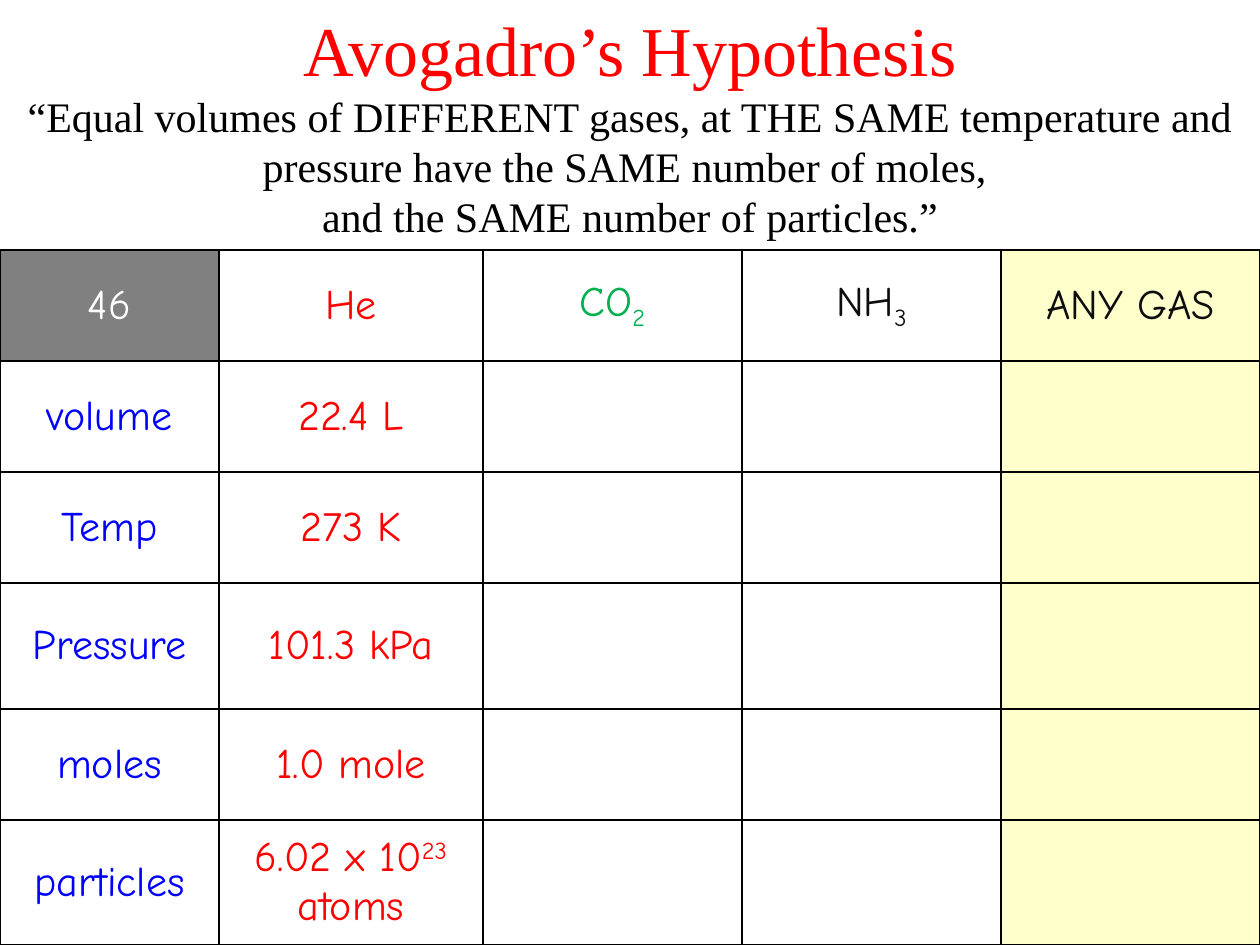
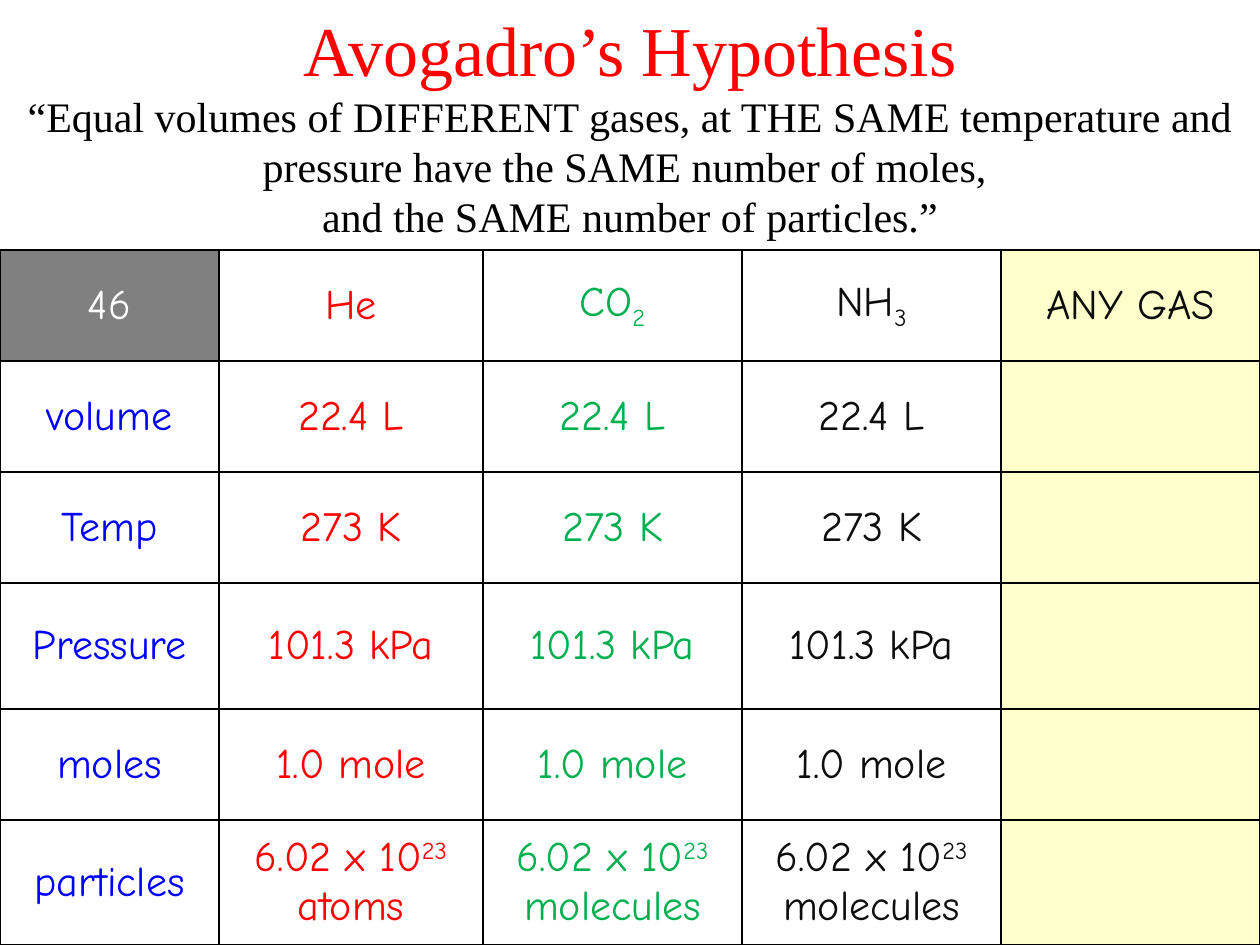
from lxml.etree import SubElement
from pptx import Presentation
from pptx.dml.color import RGBColor as Rgb
from pptx.enum.text import MSO_ANCHOR as Anchor, MSO_AUTO_SIZE as Auto, PP_ALIGN as Align
from pptx.oxml.ns import qn
from pptx.util import Pt

SCALE = 914400 / 126
WIDE, HIGH = 1260, 945
HEAD = (0, 0, 1260, 250)
GRID = (0, 250, 1260, 695)
COLS = [219, 264, 259, 259, 259]
ROWS = [111, 111, 111, 126, 111, 125]
INK = {"red": "FF0000", "green": "00B050", "blue": "0000FF", "dark": "0D0D0D",
       "black": "000000", "white": "FFFFFF", "gray": "808080", "cream": "FFFFCC"}
SERIF, HAND = "Times New Roman", "Comic Neue"
SHIFT = {"_": -25000, "^": 30000}

TITLE = "Avogadro’s Hypothesis"
LAW = ("“Equal volumes of DIFFERENT gases, at THE SAME temperature and pressure "
       "have the SAME number of moles, \nand the SAME number of particles.”")
TOPS = ["46", "He", "CO_2", "NH_3", "ANY GAS"]
TINTS = ["blue", "red", "green", "dark", "dark"]
FACTS = [("volume", "22.4 L"), ("Temp", "273 K"), ("Pressure", "101.3 kPa"),
         ("moles", "1.0 mole"), ("particles", "6.02 x 10^23\n{}")]
UNITS = ["atoms", "molecules", "molecules"]


def px(size):
    return round(size * SCALE)


def write(para, text, size=24, font=HAND, color="black"):
    para.alignment = Align.CENTER
    for num, line in enumerate(text.split("\n")):
        if num:
            para.add_line_break()
        mark = next((sign for sign in SHIFT if sign in line), None)
        for part, base in zip(line.split(mark) if mark else [line], (0, SHIFT.get(mark))):
            run = para.add_run()
            run.text = part
            run.font.size = Pt(size)
            run.font.name = font
            run.font.color.rgb = Rgb.from_string(INK[color])
            if base:
                run.font._element.set("baseline", str(base))


def edge(cell):
    props = cell._tc.get_or_add_tcPr()
    for side in ("a:lnL", "a:lnR", "a:lnT", "a:lnB"):
        line = SubElement(props, qn(side), w=str(Pt(1)))
        fill = SubElement(line, qn("a:solidFill"))
        SubElement(fill, qn("a:srgbClr"), val=INK["black"])


def paint(cell, color=None):
    if color:
        cell.fill.solid()
        cell.fill.fore_color.rgb = Rgb.from_string(INK[color])
    else:
        cell.fill.background()


def header(slide, box):
    frame = slide.shapes.add_textbox(*map(px, box)).text_frame
    frame.word_wrap = True
    frame.auto_size = Auto.SHAPE_TO_FIT_TEXT
    write(frame.paragraphs[0], TITLE, size=40, font=SERIF, color="red")
    write(frame.add_paragraph(), LAW, font=SERIF)


def gas_rows(count):
    rows = [TOPS]
    for label, fact in FACTS:
        vals = [fact.format(unit) for unit in UNITS[:count]]
        rows.append([label] + vals + [""] * (len(COLS) - 1 - count))
    return rows


def gas_grid(slide, box, count):
    table = slide.shapes.add_table(len(ROWS), len(COLS), *map(px, box)).table
    table.first_row = table.horz_banding = False
    for col, wide in zip(table.columns, COLS):
        col.width = px(wide)
    for row, high in zip(table.rows, ROWS):
        row.height = px(high)
    for r, texts in enumerate(gas_rows(count)):
        for c, text in enumerate(texts):
            cell = table.cell(r, c)
            first = r == c == 0
            cell.vertical_anchor = Anchor.MIDDLE
            edge(cell)
            paint(cell, "gray" if first else "cream" if c == len(COLS) - 1 else None)
            if text:
                write(cell.text_frame.paragraphs[0], text,
                      color="white" if first else TINTS[c])


def main():
    deck = Presentation()
    deck.slide_width, deck.slide_height = px(WIDE), px(HIGH)
    for count in (1, 3):
        slide = deck.slides.add_slide(deck.slide_layouts[6])
        header(slide, HEAD)
        gas_grid(slide, GRID, count)
    deck.save("out.pptx")


if __name__ == "__main__":
    main()
